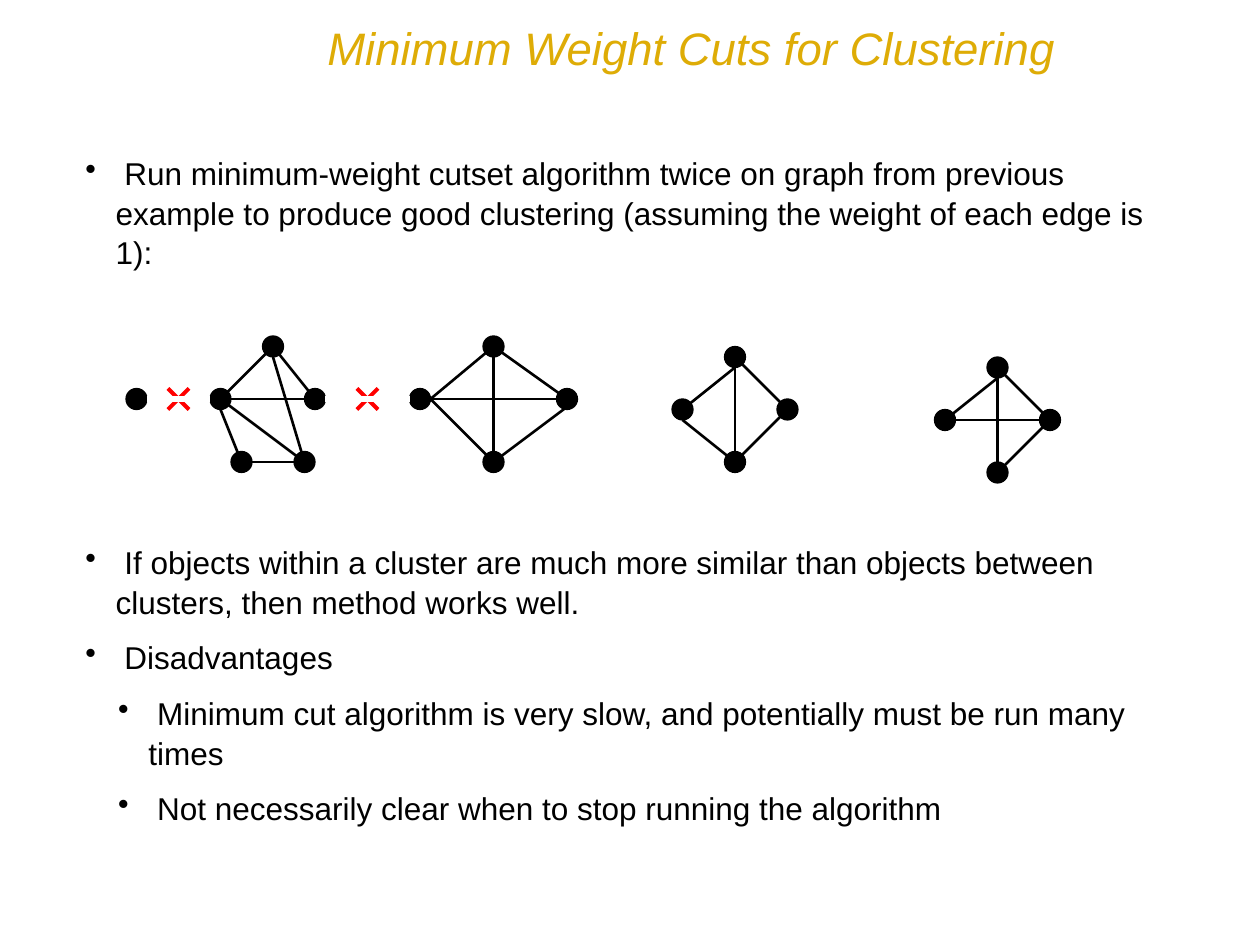
from lxml import etree
from pptx import Presentation
from pptx.dml.color import RGBColor
from pptx.enum.shapes import MSO_CONNECTOR, MSO_SHAPE
from pptx.enum.text import MSO_ANCHOR
from pptx.oxml.ns import qn
from pptx.util import Inches, Pt

LINE = MSO_CONNECTOR.STRAIGHT
OVAL = MSO_SHAPE.OVAL
MIDDLE = MSO_ANCHOR.MIDDLE

BLACK, WHITE, RED, GOLD = "000000", "FFFFFF", "FF0000", "DEAC06"
GRID = 12  # grid steps to the inch
DOT = 2    # node size in grid steps
HANG = 0.24

# Left and top of each node, in grid steps
NODES = [
    (12, 37),
    (20, 37), (25, 32), (29, 37), (22, 43), (28, 43),
    (39, 37), (46, 32), (46, 43), (53, 37),
    (64, 38), (69, 33), (69, 43), (74, 38),
    (89, 39), (94, 34), (94, 44), (99, 39),
]

# Ends of each edge, in grid steps
EDGES = [
    (14, 38, 21, 38), (21, 39, 23, 44), (23, 44, 29, 44), (26, 33, 30, 38),
    (26, 33, 21, 38), (21, 38, 30, 38), (26, 34, 29, 44), (29, 44, 21, 38),
    (30, 38, 40, 38),
    (41, 38, 47, 33), (41, 38, 47, 44), (47, 33, 47, 44), (40, 38, 54, 38),
    (47, 33, 54, 38), (55, 38, 47, 44),
    (70, 35, 65, 39), (65, 40, 70, 44), (70, 34, 75, 39), (75, 39, 70, 44),
    (70, 34, 70, 44),
    (95, 36, 90, 40), (95, 35, 100, 40), (100, 40, 95, 45), (95, 35, 95, 45),
    (91, 40, 100, 40),
]

CROSSES = [(16, 37), (34, 37)]
CUTS = [(14, 38, 20, 38), (31, 38, 39, 38)]

INTRO = [
    (" Run minimum-weight cutset algorithm twice on graph from previous example "
     "to produce good clustering (assuming the weight of each edge is 1):", 0),
]
NOTES = [
    (" If objects within a cluster are much more similar than objects between "
     "clusters, then method works well.", 0),
    (" Disadvantages", 0),
    (" Minimum cut algorithm is very slow, and potentially must be run many times", 1),
    (" Not necessarily clear when to stop running the algorithm", 1),
]


def color(code):
    return RGBColor.from_string(code)


def step(n):
    return Inches(n / GRID)


def write(para, text, size=18, ink=BLACK, italic=False, font="Arial"):
    run = para.add_run()
    run.text = text
    run.font.name = font
    run.font.size = Pt(size)
    run.font.italic = italic
    run.font.color.rgb = color(ink)


def bullet(para, level):
    props = para._p.get_or_add_pPr()
    props.set("marL", str(Inches(0.5 if level else HANG)))
    props.set("indent", str(-Inches(HANG)))
    etree.SubElement(props, qn("a:buChar")).set("char", "•")
    para.level = level


class Deck:
    def __init__(self, prs):
        self.slide = prs.slides.add_slide(prs.slide_layouts[6])
        self.shapes = self.slide.shapes

    def box(self, left, top, width, height):
        frame = self.shapes.add_textbox(
            Inches(left), Inches(top), Inches(width), Inches(height)).text_frame
        frame.word_wrap = True
        frame.vertical_anchor = MIDDLE
        return frame

    def title(self, text, *place):
        write(self.box(*place).paragraphs[0], text, size=26, ink=GOLD, italic=True)

    def points(self, items, *place):
        frame = self.box(*place)
        for i, (text, level) in enumerate(items):
            para = frame.add_paragraph() if i else frame.paragraphs[0]
            bullet(para, level)
            para.line_spacing = 1.05
            if i:
                para.space_before = Pt(9)
            write(para, text)

    def node(self, x, y):
        dot = self.shapes.add_shape(OVAL, step(x), step(y), step(DOT), step(DOT))
        dot.shadow.inherit = False
        dot.fill.solid()
        dot.fill.fore_color.rgb = color(BLACK)
        dot.line.color.rgb = color(BLACK)
        dot.line.width = Pt(0.75)

    def edge(self, x1, y1, x2, y2, ink=BLACK, width=1.5):
        line = self.shapes.add_connector(LINE, step(x1), step(y1), step(x2), step(y2))
        line.line.color.rgb = color(ink)
        line.line.width = Pt(width)
        etree.SubElement(line._element.spPr, qn("a:effectLst"))

    def cross(self, x, y):
        self.edge(x, y, x + DOT, y + DOT, ink=RED, width=2.25)
        self.edge(x + DOT, y, x, y + DOT, ink=RED, width=2.25)


def main():
    prs = Presentation()
    prs.slide_width, prs.slide_height = Inches(10), Inches(7.5)
    deck = Deck(prs)

    # Title and opening point
    deck.title("Minimum Weight Cuts for Clustering", 2.5, 0, 7.06, 0.75)
    deck.points(INTRO, 0.58, 1.33, 8.75, 0.7)

    # Graph
    for spot in NODES:
        deck.node(*spot)
    for ends in EDGES:
        deck.edge(*ends)

    # Cut edges: red crosses, then white over the removed edges
    for spot in CROSSES:
        deck.cross(*spot)
    for ends in CUTS:
        deck.edge(*ends, ink=WHITE, width=3)

    # Closing points
    deck.points(NOTES, 0.58, 4.25, 8.75, 2.36)

    prs.save("out.pptx")


if __name__ == "__main__":
    main()
